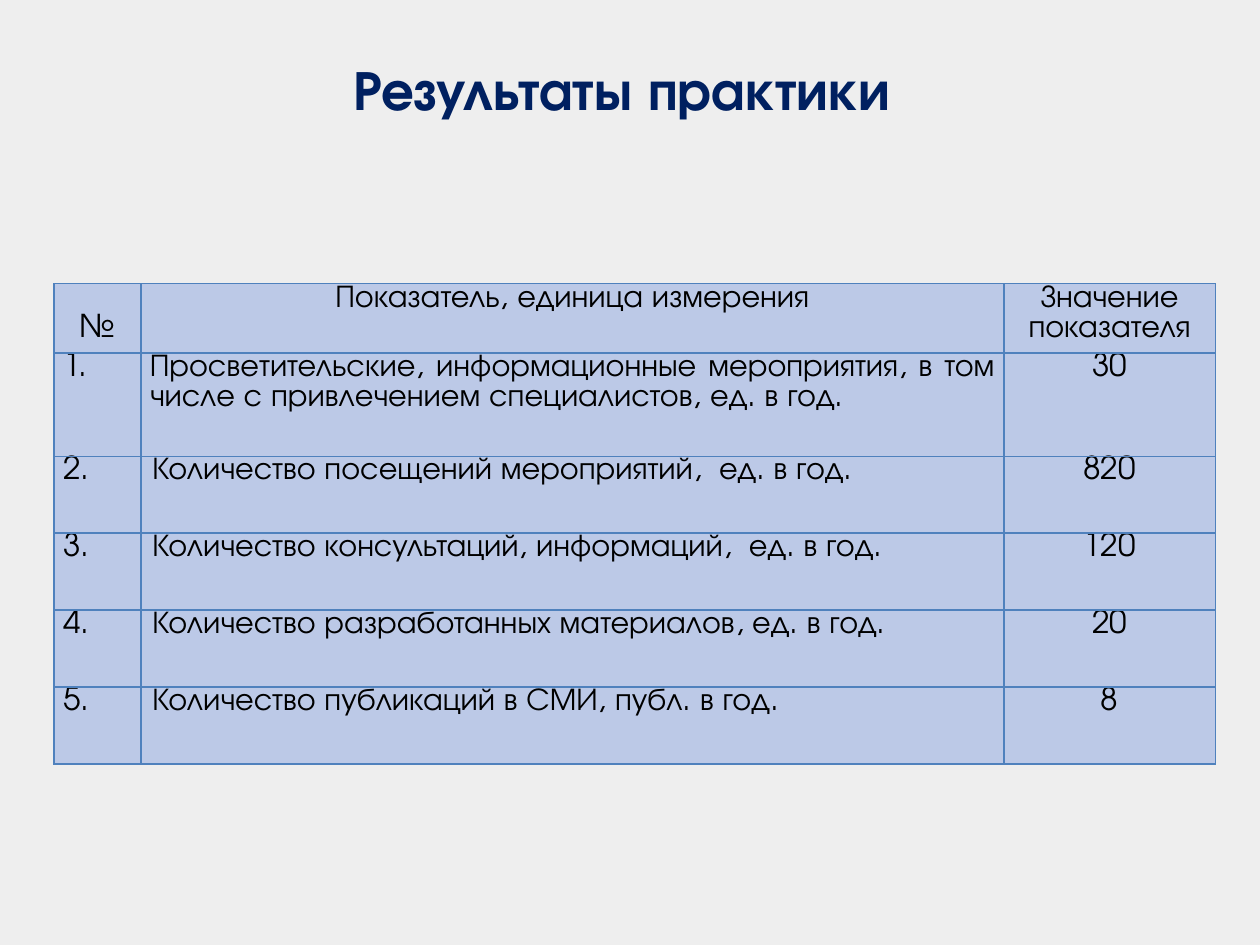
"""Build the slide with the table of practice results."""
import pptx
import pptx.dml.color
import pptx.enum.text
import pptx.oxml
import pptx.oxml.ns
import pptx.util

Cm = pptx.util.Cm
Pt = pptx.util.Pt
RGBColor = pptx.dml.color.RGBColor
ALIGN = pptx.enum.text.PP_ALIGN
ANCHOR = pptx.enum.text.MSO_ANCHOR

TITLE = "Результаты практики "
HEADER = ("№", "Показатель, единица измерения", "Значение показателя")
RESULTS = [
    ("Просветительские, информационные мероприятия, в том числе "
     "с привлечением специалистов, ед. в год.", 30),
    ("Количество посещений мероприятий,  ед. в год.", 820),
    ("Количество консультаций, информаций,  ед. в год.", 120),
    ("Количество разработанных материалов, ед. в год.", 20),
    ("Количество публикаций в СМИ, публ. в год.", 8),
]

BACKGROUND = RGBColor(0xEE, 0xEE, 0xEE)
NAVY = RGBColor(0x00, 0x20, 0x60)
BLACK = RGBColor(0x00, 0x00, 0x00)
CELL_FILL = RGBColor(0xBC, 0xC9, 0xE7)
BORDER = RGBColor(0x4F, 0x81, 0xBD)

FONT = "TeX Gyre Adventor"
TITLE_FONT = {"name": FONT, "size": Pt(32), "bold": True}
CELL_FONT = {"name": FONT, "size": Pt(18), "bold": False}
TITLE_PLACE = {"left": Cm(1.27), "top": Cm(0.33), "width": Cm(22.86), "height": Cm(2.26)}
CELL_FORMAT = {"margin_left": Cm(0.18), "margin_right": Cm(0.18), "margin_top": 0,
               "margin_bottom": 0, "vertical_anchor": ANCHOR.TOP}
TABLE_LEFT, TABLE_TOP = Cm(1.09), Cm(5.72)
COLUMN_WIDTHS = [Cm(1.75), Cm(17.4), Cm(4.26)]
ROW_HEIGHTS = [Cm(1.4), Cm(2.08)] + [Cm(1.55)] * 4
BODY_ALIGN = (ALIGN.LEFT, ALIGN.JUSTIFY, ALIGN.CENTER)
LINE_SPACING = Pt(17)
NUMBER_DROP = Cm(0.6)
FIRST_INDENT = Cm(0.05)


def apply(target, values):
    for name, value in values.items():
        setattr(target, name, value)


def write(paragraph, text, font, color, alignment):
    span = paragraph.add_run()
    span.text = text
    paragraph.alignment = alignment
    apply(span.font, font)
    span.font.color.rgb = color


def add_borders(cell):
    properties = cell._tc.get_or_add_tcPr()
    for index, side in enumerate(("lnL", "lnR", "lnT", "lnB")):
        line = pptx.oxml.parse_xml(
            f'<a:{side} {pptx.oxml.ns.nsdecls("a")} w="{Pt(1)}"><a:solidFill>'
            f'<a:srgbClr val="{BORDER}"/></a:solidFill></a:{side}>')
        properties.insert(index, line)


def add_title(page):
    box = page.shapes.title
    apply(box, TITLE_PLACE)
    box.text_frame.vertical_anchor = ANCHOR.BOTTOM
    write(box.text_frame.paragraphs[0], TITLE, TITLE_FONT, NAVY, ALIGN.CENTER)


def add_results(page):
    rows = [HEADER] + [(f"{number}.", name, str(value))
                       for number, (name, value) in enumerate(RESULTS, 1)]
    table = page.shapes.add_table(
        len(rows), len(HEADER), TABLE_LEFT, TABLE_TOP,
        sum(COLUMN_WIDTHS), sum(ROW_HEIGHTS)).table
    for column, width in zip(table.columns, COLUMN_WIDTHS):
        column.width = width
    for row, height in zip(table.rows, ROW_HEIGHTS):
        row.height = height
    for row_index, texts in enumerate(rows):
        for column_index, text in enumerate(texts):
            cell = table.cell(row_index, column_index)
            apply(cell, CELL_FORMAT)
            cell.fill.solid()
            cell.fill.fore_color.rgb = CELL_FILL
            add_borders(cell)
            paragraph = cell.text_frame.paragraphs[0]
            alignment = BODY_ALIGN[column_index] if row_index else ALIGN.CENTER
            write(paragraph, text, CELL_FONT, BLACK, alignment)
            paragraph.line_spacing = LINE_SPACING
            if row_index > 1 and column_index == 1:
                paragraph._p.get_or_add_pPr().set("indent", str(FIRST_INDENT))
    table.cell(0, 0).margin_top = NUMBER_DROP


def main():
    deck = pptx.Presentation()
    deck.slide_width, deck.slide_height = Cm(25.4), Cm(19.05)
    page = deck.slides.add_slide(deck.slide_layouts[5])
    page.background.fill.solid()
    page.background.fill.fore_color.rgb = BACKGROUND
    add_title(page)
    add_results(page)
    deck.save("out.pptx")


if __name__ == "__main__":
    main()
